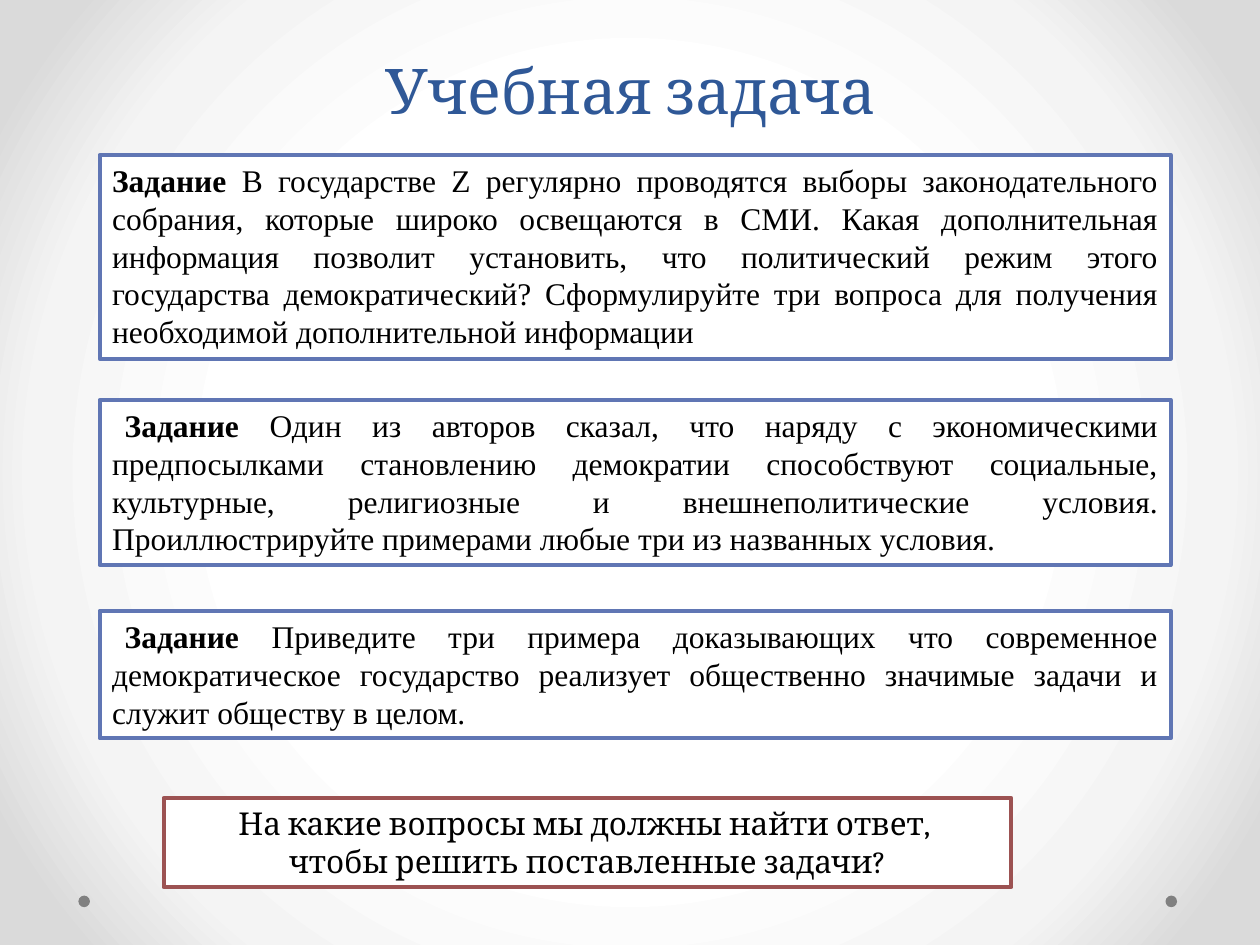
from lxml import etree
from pptx import Presentation
from pptx.dml.color import RGBColor
from pptx.enum import shapes, text
from pptx.oxml import parse_xml
from pptx.util import Pt

COLORS = {
    "title": "2F5897", "task": "6076B4", "question": "9C5252",
    "dot": "808080", "white": "FFFFFF", "black": "000000",
}
BACKGROUND_STOPS = [(50, "FFFFFF"), (76, "F4F4F4"), (92, "DADADA")]
DRAWING = "http://schemas.openxmlformats.org/drawingml/2006/main"

TASK_LABEL = "Задание "
TASKS = [  # top, height, first-line indent, wording
    (88.5, 116.5, 0,
     "В государстве Z регулярно проводятся выборы законодательного собрания, "
     "которые широко освещаются в СМИ. Какая дополнительная информация позволит "
     "установить, что политический режим этого государства демократический? "
     "Сформулируйте три вопроса для получения необходимой дополнительной информации"),
    (228.5, 94.5, 7.2,
     "Один из авторов сказал, что наряду с экономическими предпосылками становлению "
     "демократии способствуют социальные, культурные, религиозные и "
     "внешнеполитические условия. Проиллюстрируйте примерами любые три из "
     "названных условия."),
    (349, 73, 7.2,
     "Приведите три примера доказывающих что современное демократическое "
     "государство реализует общественно значимые задачи и служит обществу в целом."),
]
QUESTION = ["На какие вопросы мы должны найти ответ, ",
            "чтобы решить поставленные задачи?"]


def color(name):
    return RGBColor.from_string(COLORS[name])


def format_run(run, font, size, color_name="black", bold=False):
    run.font.name = font
    run.font.size = Pt(size)
    run.font.bold = bold
    run.font.color.rgb = color(color_name)


def add_background(slide):
    """Fill the slide with a circular gradient around its centre."""
    slide.background.fill.gradient()
    old = slide.element.find(f".//{{{DRAWING}}}gradFill")
    gradient = parse_xml(f'<a:gradFill xmlns:a="{DRAWING}" rotWithShape="1"/>')
    stops = etree.SubElement(gradient, f"{{{DRAWING}}}gsLst")
    for position, value in BACKGROUND_STOPS:
        stop = etree.SubElement(stops, f"{{{DRAWING}}}gs", pos=str(position * 1000))
        etree.SubElement(stop, f"{{{DRAWING}}}srgbClr", val=value)
    circle = etree.SubElement(gradient, f"{{{DRAWING}}}path", {"path": "circle"})
    etree.SubElement(circle, f"{{{DRAWING}}}fillToRect",
                     dict.fromkeys("ltrb", "50000"))
    old.getparent().replace(old, gradient)


def add_dot(slide, left, top, size):
    dot = slide.shapes.add_shape(shapes.MSO_SHAPE.OVAL, Pt(left), Pt(top),
                                 Pt(size), Pt(size))
    dot.shadow.inherit = False
    dot.fill.solid()
    dot.fill.fore_color.rgb = color("dot")
    dot.line.fill.background()


def add_title(slide, left, top, width, height):
    frame = slide.shapes.add_textbox(Pt(left), Pt(top), Pt(width), Pt(height)).text_frame
    frame.word_wrap = True
    frame.vertical_anchor = text.MSO_ANCHOR.BOTTOM
    frame.text = "Учебная задача"
    paragraph = frame.paragraphs[0]
    paragraph.alignment = text.PP_ALIGN.CENTER
    paragraph.line_spacing = Pt(58)
    format_run(paragraph.runs[0], "Cambria", 36, "title")


def add_panel(slide, left, top, width, height, line_color):
    """Add a white framed rectangle and return its text frame."""
    panel = slide.shapes.add_shape(shapes.MSO_SHAPE.RECTANGLE, Pt(left), Pt(top),
                                   Pt(width), Pt(height))
    panel.shadow.inherit = False
    panel.fill.solid()
    panel.fill.fore_color.rgb = color("white")
    panel.line.color.rgb = color(line_color)
    panel.line.width = Pt(2.25)
    frame = panel.text_frame
    frame.word_wrap = True
    frame.vertical_anchor = text.MSO_ANCHOR.TOP
    return frame


def add_task(slide, left, top, width, height, indent, wording):
    frame = add_panel(slide, left, top, width, height, "task")
    paragraph = frame.paragraphs[0]
    paragraph.alignment = text.PP_ALIGN.JUSTIFY
    paragraph._p.get_or_add_pPr().set("indent", str(Pt(indent)))
    for part, bold in ((TASK_LABEL, True), (wording, False)):
        run = paragraph.add_run()
        run.text = part
        format_run(run, "Times New Roman", 18, bold=bold)


def add_question(slide, left, top, width, height):
    frame = add_panel(slide, left, top, width, height, "question")
    frame.text = "\n".join(QUESTION)
    for paragraph in frame.paragraphs:
        paragraph.alignment = text.PP_ALIGN.CENTER
        format_run(paragraph.runs[0], "Cambria", 18)


def main():
    presentation = Presentation()
    presentation.slide_width, presentation.slide_height = Pt(720), Pt(540)
    slide = presentation.slides.add_slide(presentation.slide_layouts[6])
    add_background(slide)
    for left in (666, 44.8):
        add_dot(slide, left, 511.8, 6.6)
    add_title(slide, 36.5, 21, 648, 55)
    for top, height, indent, wording in TASKS:
        add_task(slide, 57, top, 612, height, indent, wording)
    add_question(slide, 93.5, 456, 484.5, 51)
    presentation.save("out.pptx")


if __name__ == "__main__":
    main()
